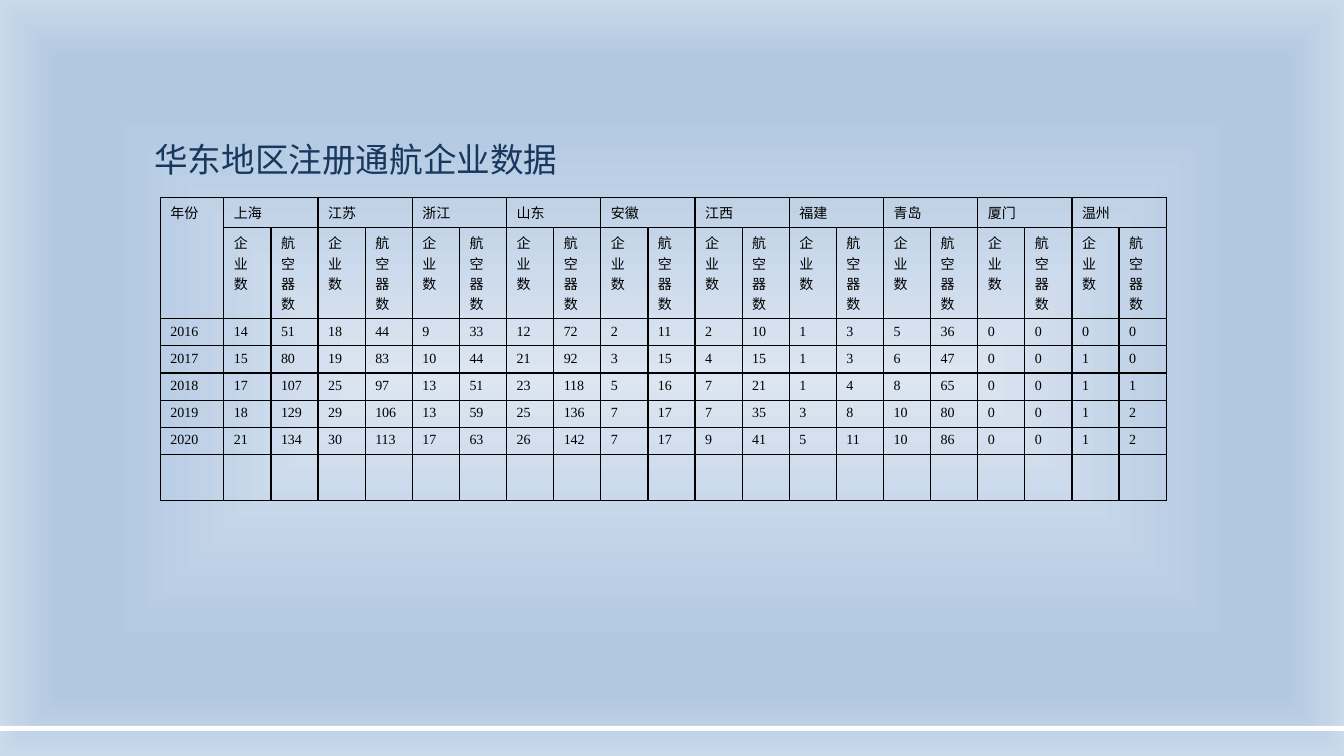
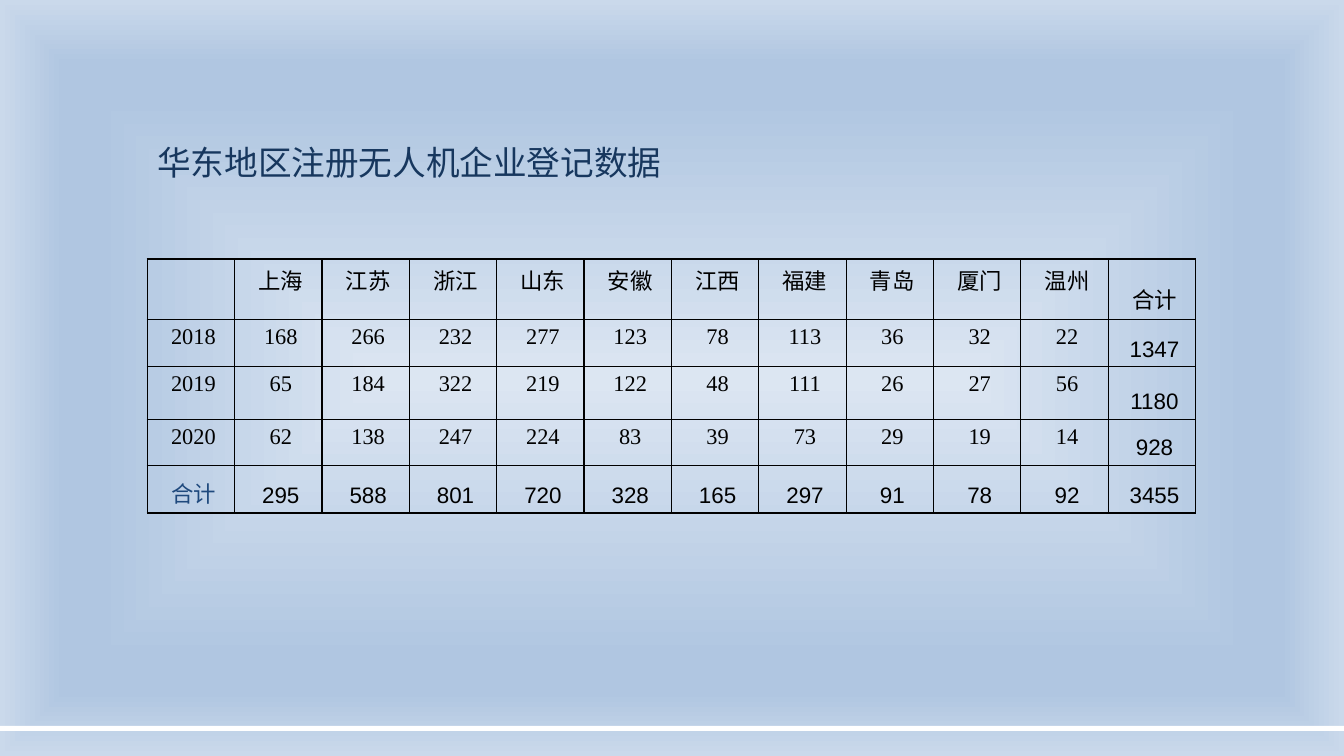
from dataclasses import dataclass

from lxml.etree import SubElement
from pptx import Presentation
from pptx.dml.color import RGBColor
from pptx.enum.shapes import MSO_SHAPE as Shape
from pptx.enum.text import MSO_ANCHOR as Anchor, PP_ALIGN as Align
from pptx.oxml import parse_xml
from pptx.oxml.ns import nsdecls, qn
from pptx.util import Inches, Pt

CITIES = ["上海", "江苏", "浙江", "山东", "安徽", "江西", "福建", "青岛", "厦门", "温州"]
KINDS = ["企业数", "航空器数"]
FIRMS = {
    "title": "华东地区注册通航企业数据",
    "place": (1.43, 1.11, 5.28, 0.72),
    "rows": {
        2016: [14, 51, 18, 44, 9, 33, 12, 72, 2, 11, 2, 10, 1, 3, 5, 36, 0, 0, 0, 0],
        2017: [15, 80, 19, 83, 10, 44, 21, 92, 3, 15, 4, 15, 1, 3, 6, 47, 0, 0, 1, 0],
        2018: [17, 107, 25, 97, 13, 51, 23, 118, 5, 16, 7, 21, 1, 4, 8, 65, 0, 0, 1, 1],
        2019: [18, 129, 29, 106, 13, 59, 25, 136, 7, 17, 7, 35, 3, 8, 10, 80, 0, 0, 1, 2],
        2020: [21, 134, 30, 113, 17, 63, 26, 142, 7, 17, 9, 41, 5, 11, 10, 86, 0, 0, 1, 2],
    },
}
DRONES = {
    "title": "华东地区注册无人机企业登记数据",
    "place": (1.46, 0.51, 10.4, 1.35),
    "rows": {
        2018: [168, 266, 232, 277, 123, 78, 113, 36, 32, 22],
        2019: [65, 184, 322, 219, 122, 48, 111, 26, 27, 56],
        2020: [62, 138, 247, 224, 83, 39, 73, 29, 19, 14],
    },
}
TOTAL = "合计"


@dataclass(frozen=True)
class Theme:
    title: str = "17375E"
    label: str = "1F497D"
    ink: str = "000000"
    band: str = "FFFFFF"
    glow: tuple = ((0, "DCE6F2"), (74, "B0C6E1"), (83, "B0C6E1"), (100, "CAD9EB"))
    han: str = "Noto Sans CJK SC"
    serif: str = "Times New Roman"
    sans: str = "Arial"
    head: int = 24
    small: int = 10
    large: int = 16


T = Theme()


def write(para, text, size, font, color):
    run = para.add_run()
    run.text = str(text)
    run.font.color.rgb = RGBColor.from_string(color)
    for key, val in {"size": Pt(size), "name": font, "bold": False}.items():
        setattr(run.font, key, val)
    SubElement(run.font._element, qn("a:ea"), typeface=T.han)


def set_master(deck):
    """Give every slide the glowing background."""
    master = deck.slide_master
    master.background.fill.solid()
    plain = master.element.find(".//" + qn("p:bgPr")).find(qn("a:solidFill"))
    stops = "".join(
        f'<a:gs pos="{pos * 1000}"><a:srgbClr val="{color}"/></a:gs>'
        for pos, color in T.glow)
    glow = parse_xml(
        f'<a:gradFill {nsdecls("a")} rotWithShape="1"><a:gsLst>{stops}</a:gsLst>'
        '<a:path path="shape"><a:fillToRect l="50000" t="50000" r="50000" b="50000"/>'
        '</a:path></a:gradFill>')
    plain.getparent().replace(plain, glow)


def add_band(deck, slide):
    """Draw the white band behind everything else."""
    band = slide.shapes.add_shape(
        Shape.RECTANGLE, 0, Inches(7.2), deck.slide_width, Inches(0.05))
    band.shadow.inherit = False
    band.fill.solid()
    band.fill.fore_color.rgb = RGBColor.from_string(T.band)
    band.line.fill.background()
    slide.shapes.element.insert(2, band.element)


def add_slide(deck, data):
    slide = deck.slides.add_slide(deck.slide_layouts[5])
    add_band(deck, slide)
    title = slide.shapes.title
    for side, val in zip(("left", "top", "width", "height"), data["place"]):
        setattr(title, side, Inches(val))
    frame = title.text_frame
    frame.word_wrap = True
    frame.vertical_anchor = Anchor.BOTTOM
    para = frame.paragraphs[0]
    para.alignment, para.line_spacing = Align.LEFT, 0.9
    write(para, data["title"], T.head, T.han, T.title)
    return slide


def add_grid(slide, left, top, widths, heights):
    """Add an unfilled table with thin ruled cells."""
    table = slide.shapes.add_table(
        len(heights), len(widths), Inches(left), Inches(top),
        Inches(sum(widths)), Inches(sum(heights))).table
    table.first_row = table.horz_banding = False
    for col, width in zip(table.columns, widths):
        col.width = Inches(width)
    for row, height in zip(table.rows, heights):
        row.height = Inches(height)
    for cell in table.iter_cells():
        props = cell._tc.get_or_add_tcPr()
        for side in ("lnL", "lnR", "lnT", "lnB"):
            line = SubElement(props, qn("a:" + side), w=str(Pt(1)))
            fill = SubElement(line, qn("a:solidFill"))
            SubElement(fill, qn("a:srgbClr"), val=T.ink)
        cell.fill.background()
    return table


def fill_firms(slide):
    years = FIRMS["rows"]
    count = len(CITIES) * len(KINDS)
    first = 0.63
    widths = [first] + [(9.98 - first) / count] * count
    heights = [0.3, 0.9] + [0.27] * len(years) + [0.46]
    table = add_grid(slide, 1.59, 1.96, widths, heights)
    table.cell(0, 0).merge(table.cell(1, 0))
    texts = {(0, 0): "年份"}
    for i, city in enumerate(CITIES):
        col = 1 + i * len(KINDS)
        table.cell(0, col).merge(table.cell(0, col + 1))
        texts[0, col] = city
        for j, kind in enumerate(KINDS):
            texts[1, col + j] = kind
    for r, (year, vals) in enumerate(years.items(), 2):
        for c, val in enumerate([year] + vals):
            texts[r, c] = val
    for (r, c), text in texts.items():
        para = table.cell(r, c).text_frame.paragraphs[0]
        write(para, text, T.small, T.serif, T.ink)


def fill_drones(slide):
    years = DRONES["rows"]
    rows = [[""] + CITIES + [TOTAL]]
    rows += [[year] + vals + [sum(vals)] for year, vals in years.items()]
    sums = [sum(col) for col in zip(*years.values())]
    rows.append([TOTAL] + sums + [sum(sums)])
    count = len(rows[0])
    table = add_grid(slide, 1.46, 2.57, [10.4 / count] * count,
                     [0.6, 0.47, 0.52, 0.46, 0.47])
    for r, row in enumerate(rows):
        for c, text in enumerate(row):
            if text == "":
                continue
            last = r == len(rows) - 1
            label = last and c == 0
            summed = last or c == count - 1
            cell = table.cell(r, c)
            if summed:
                cell.vertical_anchor = Anchor.BOTTOM
            para = cell.text_frame.paragraphs[0]
            para.alignment = Align.CENTER
            left, indent = (0.05, 0) if label else (0.3, -0.25)
            props = para._p.get_or_add_pPr()
            props.set("marL", str(Inches(left)))
            props.set("indent", str(Inches(indent)))
            if label:
                para.line_spacing = 0.9
                write(para, text, T.large, T.han, T.label)
            else:
                write(para, text, T.large, T.sans if summed else T.serif, T.ink)


def main():
    deck = Presentation()
    deck.slide_width, deck.slide_height = Inches(13.33), Inches(7.5)
    set_master(deck)
    firms, drones = [add_slide(deck, data) for data in (FIRMS, DRONES)]
    fill_firms(firms)
    fill_drones(drones)
    deck.save("out.pptx")


if __name__ == "__main__":
    main()
